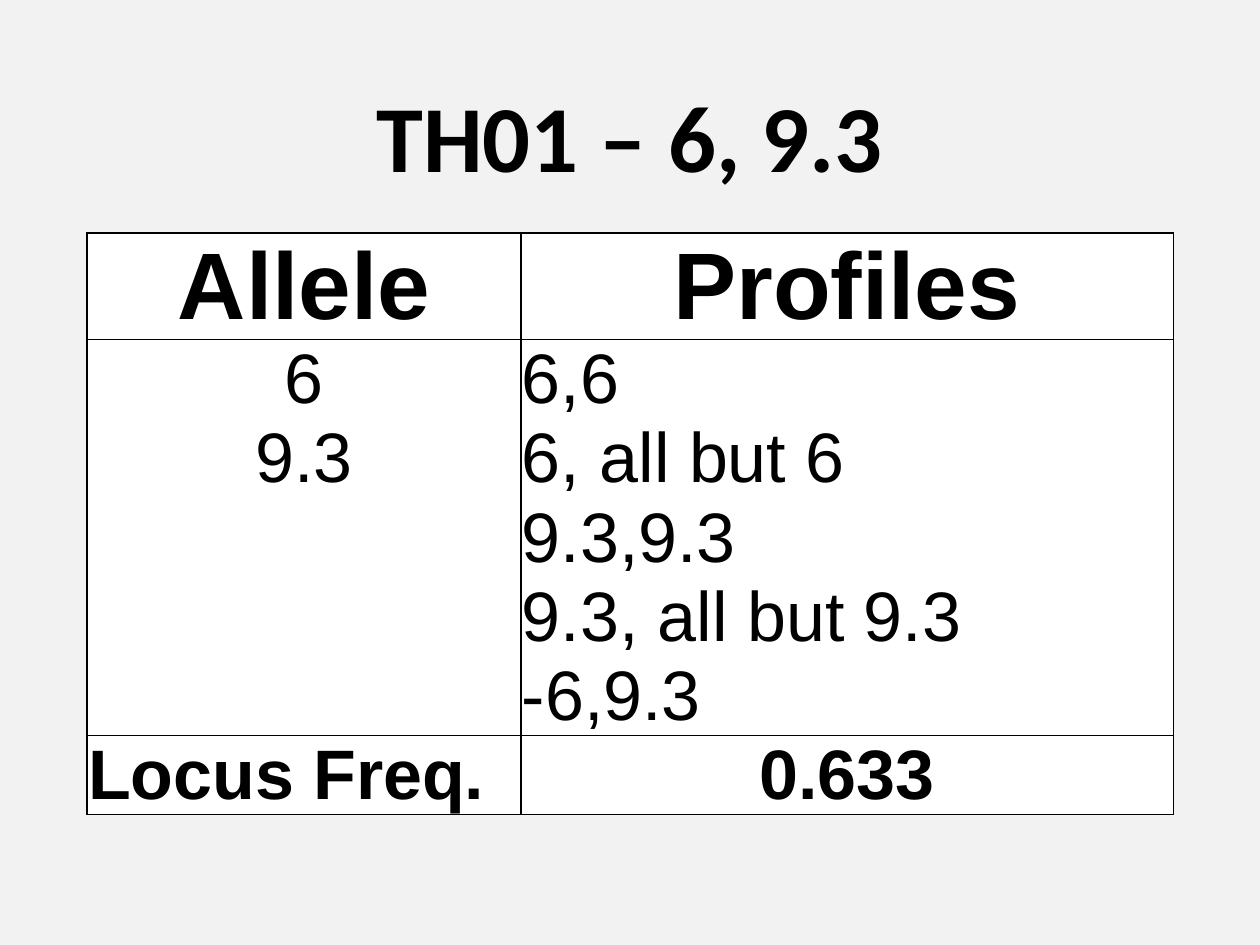
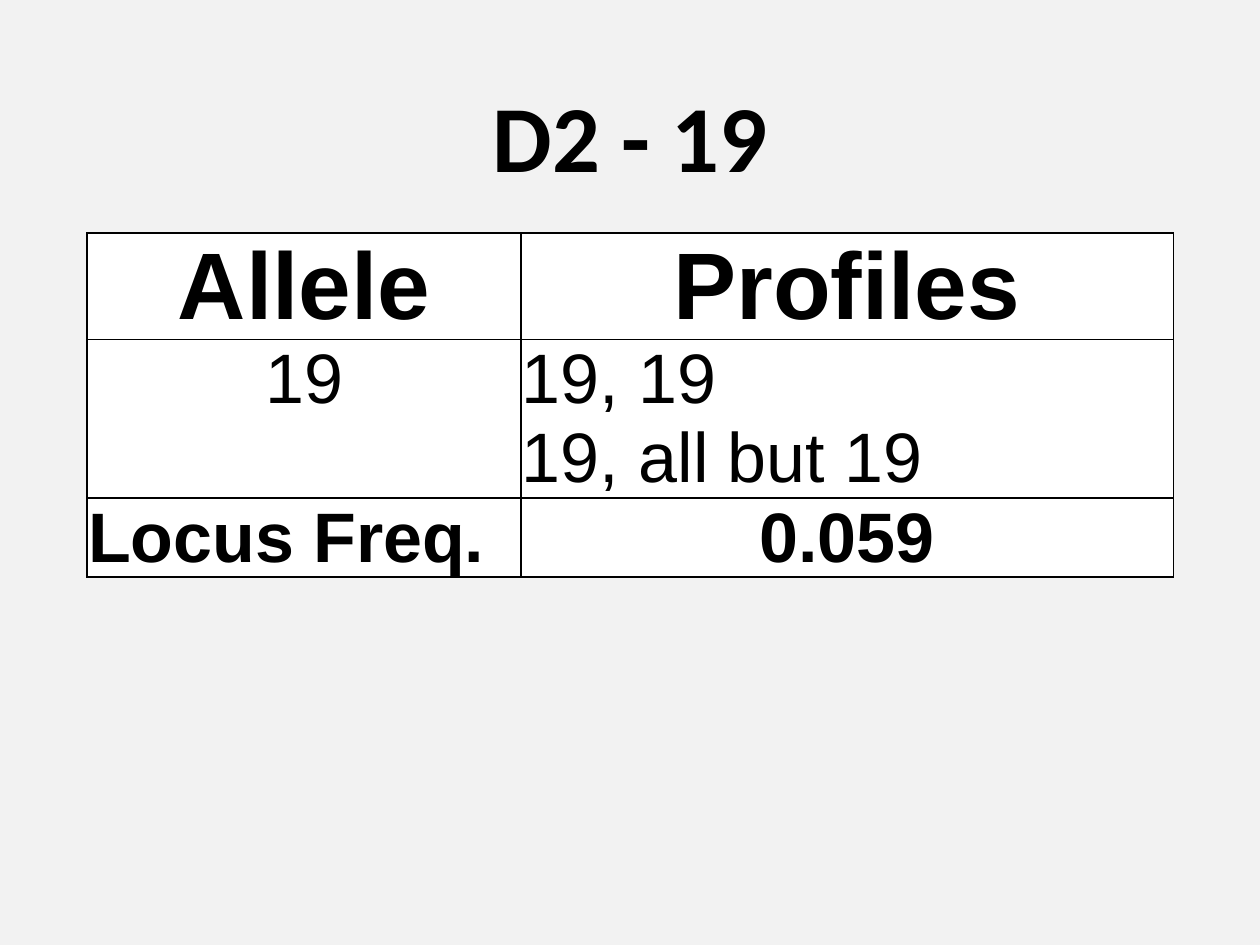
from dataclasses import dataclass

from lxml.etree import SubElement
from pptx import Presentation
from pptx.dml.color import RGBColor
from pptx.enum.text import MSO_ANCHOR, MSO_AUTO_SIZE, PP_ALIGN
from pptx.oxml.ns import qn
from pptx.util import Pt


@dataclass(frozen=True)
class Theme:
    """Colours, fonts and type sizes shared by the slides."""

    background: str = "F2F2F2"
    cell: str = "FFFFFF"
    ink: str = "000000"
    title_font: str = "Calibri"
    table_font: str = "Arial"
    large: int = 54
    medium: int = 40


THEME = Theme()
SLIDE_SIZE = (1260, 945)
TITLE_BOX = (87, 50, 1086, 183)
TABLE_BOX = (87, 233, 1086)
ALLELE_SHARE = 0.4
HEADER_HEIGHT, ROW_HEIGHT = 106, 79
TITLE_ONLY = 5

LOCI = [
    (
        "TH01 – 6, 9.3",
        ["6", "9.3"],
        ["6,6", "6, all but 6", "9.3,9.3", "9.3, all but 9.3", "-6,9.3"],
        "0.633",
    ),
    ("D2 - 19", ["19"], ["19, 19", "19, all but 19"], "0.059"),
]


def px(length):
    """Turn pixels at 126 to the inch into EMU."""
    return round(length * 914400 / 126)


def write_text(frame, text, *, size, font=THEME.table_font, bold=False,
               align=PP_ALIGN.LEFT, line_spacing=None):
    """Write one formatted paragraph into a text frame."""
    paragraph = frame.paragraphs[0]
    paragraph.alignment = align
    paragraph.line_spacing = line_spacing
    run = paragraph.add_run()
    run.text = text
    run.font.name = font
    run.font.size = Pt(size)
    run.font.bold = bold
    run.font.color.rgb = RGBColor.from_string(THEME.ink)


def add_border(cell, side, width):
    """Draw one cell border, or clear it when the width is zero."""
    properties = cell._tc.get_or_add_tcPr()
    line = SubElement(properties, qn(f"a:ln{side}"), w=str(Pt(width)))
    if width:
        fill = SubElement(line, qn("a:solidFill"))
        SubElement(fill, qn("a:srgbClr"), val=THEME.ink)
    else:
        SubElement(line, qn("a:noFill"))


def format_cell(cell, *, top, bottom, right, anchor=MSO_ANCHOR.BOTTOM):
    """Set the borders, fill, insets and anchor of a cell."""
    for side, width in {"L": 1, "R": right, "T": top, "B": bottom}.items():
        add_border(cell, side, width)
    cell.fill.solid()
    cell.fill.fore_color.rgb = RGBColor.from_string(THEME.cell)
    cell.margin_left = cell.margin_right = cell.margin_top = px(1)
    cell.margin_bottom = 0
    cell.vertical_anchor = anchor


def add_title(slide, box, text):
    """Place and format the slide title."""
    title = slide.shapes.title
    title.left, title.top, title.width, title.height = map(px, box)
    frame = title.text_frame
    frame.auto_size = MSO_AUTO_SIZE.NONE
    frame.vertical_anchor = MSO_ANCHOR.MIDDLE
    write_text(frame, text, size=THEME.large, font=THEME.title_font, bold=True,
               align=PP_ALIGN.CENTER, line_spacing=0.9)


def add_locus_table(slide, box, alleles, profiles, frequency):
    """List the alleles and profiles of a locus above its frequency."""
    left, top, width = box
    last = len(profiles) + 1
    heights = [HEADER_HEIGHT] + [ROW_HEIGHT] * last
    table = slide.shapes.add_table(
        last + 1, 2, px(left), px(top), px(width), px(sum(heights))
    ).table
    table.first_row = table.horz_banding = False
    allele_width = round(width * ALLELE_SHARE)
    for column, column_width in zip(table.columns, (allele_width, width - allele_width)):
        column.width = px(column_width)

    padded_alleles = alleles + [""] * (len(profiles) - len(alleles))
    rows = [("Allele", "Profiles"), *zip(padded_alleles, profiles),
            ("Locus Freq.", frequency)]
    for row, texts in enumerate(rows):
        table.rows[row].height = px(heights[row])
        is_edge = row in (0, last)
        for column, text in enumerate(texts):
            cell = table.cell(row, column)
            is_frequency = row == last and column == 1
            format_cell(
                cell,
                top=int(is_edge or row == 1),
                bottom=int(is_edge or row == last - 1),
                right=0.5 if column else 1,
                anchor=MSO_ANCHOR.MIDDLE if is_frequency else MSO_ANCHOR.BOTTOM,
            )
            is_centred = row == 0 or is_frequency or (column == 0 and row < last)
            if text:
                write_text(
                    cell.text_frame, text, bold=is_edge,
                    size=THEME.medium if row else THEME.large,
                    align=PP_ALIGN.CENTER if is_centred else PP_ALIGN.LEFT,
                )


def add_locus_slide(presentation, title, alleles, profiles, frequency):
    """Add the slide of one locus."""
    slide = presentation.slides.add_slide(presentation.slide_layouts[TITLE_ONLY])
    add_title(slide, TITLE_BOX, title)
    add_locus_table(slide, TABLE_BOX, alleles, profiles, frequency)


def main():
    """Build and save the presentation."""
    presentation = Presentation()
    presentation.slide_width, presentation.slide_height = map(px, SLIDE_SIZE)
    background = presentation.slide_master.background.fill
    background.solid()
    background.fore_color.rgb = RGBColor.from_string(THEME.background)
    for locus in LOCI:
        add_locus_slide(presentation, *locus)
    presentation.save("out.pptx")


if __name__ == "__main__":
    main()
